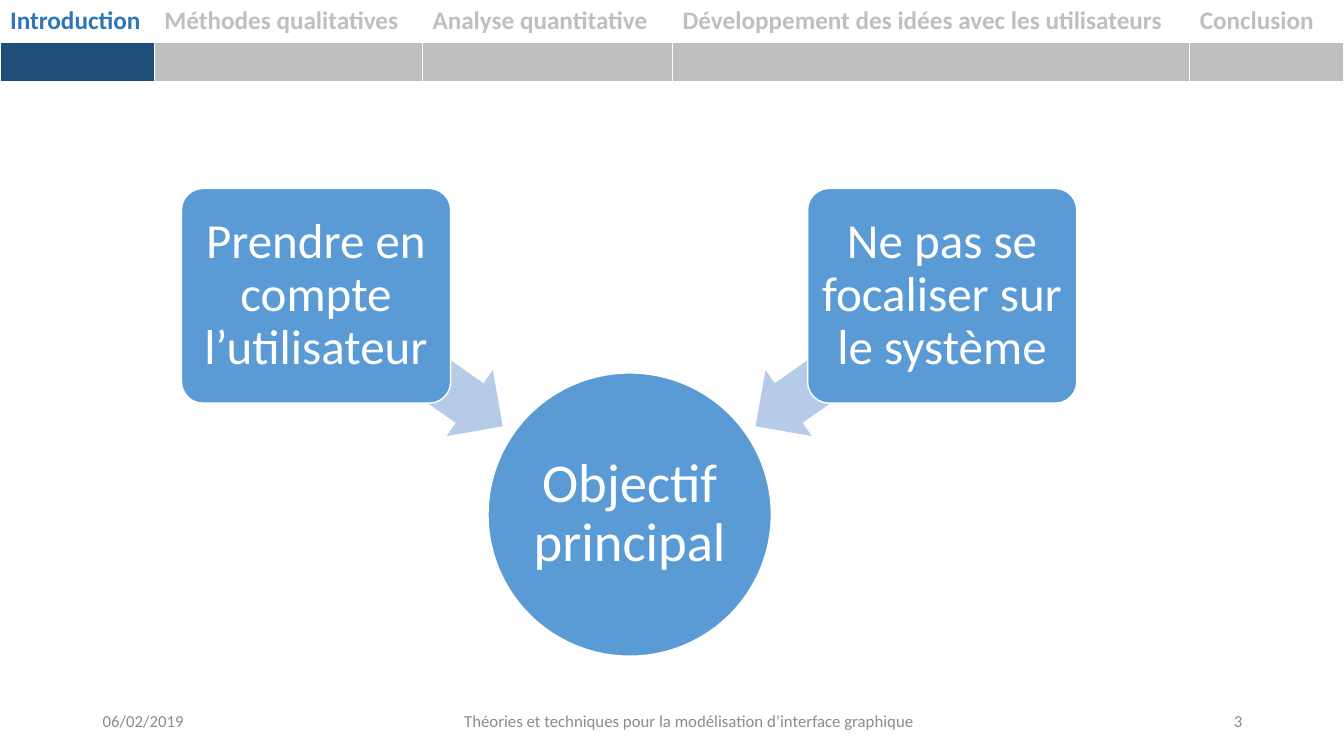
from dataclasses import dataclass

from lxml import etree
from pptx import Presentation
from pptx import util as u
from pptx.dml.color import RGBColor
from pptx.enum import shapes, text
from pptx.oxml import ns

WHITE = RGBColor(0xFF, 0xFF, 0xFF)
BLUE = RGBColor(0x5B, 0x9B, 0xD5)
PALE_BLUE = RGBColor(0xB5, 0xCB, 0xE7)
ACTIVE_TEXT = RGBColor(0x2E, 0x75, 0xB6)
ACTIVE_BAR = RGBColor(0x1F, 0x4E, 0x79)
SILVER = RGBColor(0xBF, 0xBF, 0xBF)
FOOTER_GREY = RGBColor(0x8C, 0x8C, 0x8C)

ALIGN = text.PP_ALIGN
KIND = shapes.MSO_SHAPE


@dataclass
class Section:
    name: str
    width: float
    active: bool = False


@dataclass
class Box:
    left: float
    top: float
    width: float
    height: float

    def lengths(self) -> list:
        return [u.Inches(v) for v in (self.left, self.top, self.width, self.height)]


@dataclass
class Node:
    kind: KIND
    box: Box
    color: RGBColor
    label: str = ""
    size: int = 0
    inset: float = 0
    adjustments: tuple = ()
    rotation: float = 0


@dataclass
class FooterItem:
    label: str
    box: Box
    align: ALIGN


SECTIONS = [
    Section("Introduction", 1.53, True),
    Section("Méthodes qualitatives", 2.66),
    Section("Analyse quantitative", 2.48),
    Section("Développement des idées avec les utilisateurs", 5.13),
    Section("Conclusion", 1.53),
]


def arrow(left: float, rotation: float) -> Node:
    return Node(KIND.LEFT_ARROW, Box(left, 3.18, 2.26, 0.8), PALE_BLUE,
                adjustments=(0.6, 0.5), rotation=rotation)


def idea(left: float, label: str) -> Node:
    return Node(KIND.ROUNDED_RECTANGLE, Box(left, 1.87, 2.67, 2.13), BLUE,
                label, 35, 0.07, (0.1,))


NODES = [
    Node(KIND.OVAL, Box(4.84, 3.7, 2.81, 2.81), BLUE, "Objectif principal", 39, 0.03),
    arrow(2.93, 215),
    idea(1.8, "Prendre en compte l’utilisateur"),
    arrow(7.29, 325),
    idea(8.01, "Ne pas se focaliser sur le système"),
]

FOOTER = [
    FooterItem("06/02/2019", Box(0.92, 6.95, 3, 0.4), ALIGN.LEFT),
    FooterItem("Théories et techniques pour la modélisation d’interface graphique",
               Box(4.42, 6.95, 4.83, 0.4), ALIGN.CENTER),
    FooterItem("3", Box(9.42, 6.95, 3, 0.4), ALIGN.RIGHT),
]


def set_all(target, values: dict) -> None:
    for name, value in values.items():
        setattr(target, name, value)


def write(tf, label: str, size: int, color: RGBColor, bold: bool = False,
          **paragraph_format) -> None:
    p = tf.paragraphs[0]
    set_all(p, paragraph_format)
    r = p.add_run()
    r.text = label
    set_all(r.font, {"name": "Calibri", "size": u.Pt(size), "bold": bold})
    r.font.color.rgb = color


def add_borders(cell, bottom: int = 1) -> None:
    """Draw white cell borders; bottom is a width in points."""
    tc_pr = cell._tc.get_or_add_tcPr()
    for side, width in {"L": 1, "R": 1, "T": 1, "B": bottom}.items():
        ln = etree.SubElement(tc_pr, ns.qn(f"a:ln{side}"), w=str(u.Pt(width)))
        fill = etree.SubElement(ln, ns.qn("a:solidFill"))
        etree.SubElement(fill, ns.qn("a:srgbClr"), val=str(WHITE))


def add_navigation(s) -> None:
    box = Box(0, 0, sum(section.width for section in SECTIONS), 0.8)
    table = s.shapes.add_table(2, len(SECTIONS), *box.lengths()).table
    set_all(table, {"first_row": False, "horz_banding": False})
    for i, section in enumerate(SECTIONS):
        table.columns[i].width = u.Inches(section.width)
        name, bar = table.cell(0, i), table.cell(1, i)
        add_borders(name, bottom=3)
        name.fill.background()
        write(name.text_frame, section.name, 18,
              ACTIVE_TEXT if section.active else SILVER, bold=True)
        add_borders(bar)
        bar.fill.solid()
        bar.fill.fore_color.rgb = ACTIVE_BAR if section.active else SILVER


def add_node(s, node: Node) -> None:
    sp = s.shapes.add_shape(node.kind, *node.box.lengths())
    sp.shadow.inherit = False
    sp.rotation = node.rotation
    for i, value in enumerate(node.adjustments):
        sp.adjustments[i] = value
    sp.fill.solid()
    sp.fill.fore_color.rgb = node.color
    if not node.label:
        sp.line.fill.background()
        return
    sp.line.color.rgb = WHITE
    sp.line.width = u.Pt(1)
    tf = sp.text_frame
    set_all(tf, {"word_wrap": True, "vertical_anchor": text.MSO_ANCHOR.MIDDLE})
    set_all(tf, {f"margin_{side}": u.Inches(node.inset)
                 for side in ("left", "top", "right", "bottom")})
    write(tf, node.label, node.size, WHITE, alignment=ALIGN.CENTER, line_spacing=0.9)


def add_footer_item(s, item: FooterItem) -> None:
    tf = s.shapes.add_textbox(*item.box.lengths()).text_frame
    set_all(tf, {"word_wrap": True, "vertical_anchor": text.MSO_ANCHOR.MIDDLE})
    write(tf, item.label, 12, FOOTER_GREY, alignment=item.align)


def main() -> None:
    prs = Presentation()
    set_all(prs, {"slide_width": u.Inches(13.33), "slide_height": u.Inches(7.5)})
    s = prs.slides.add_slide(prs.slide_layouts[6])
    add_navigation(s)
    for node in NODES:
        add_node(s, node)
    for item in FOOTER:
        add_footer_item(s, item)
    prs.save("out.pptx")


if __name__ == "__main__":
    main()
